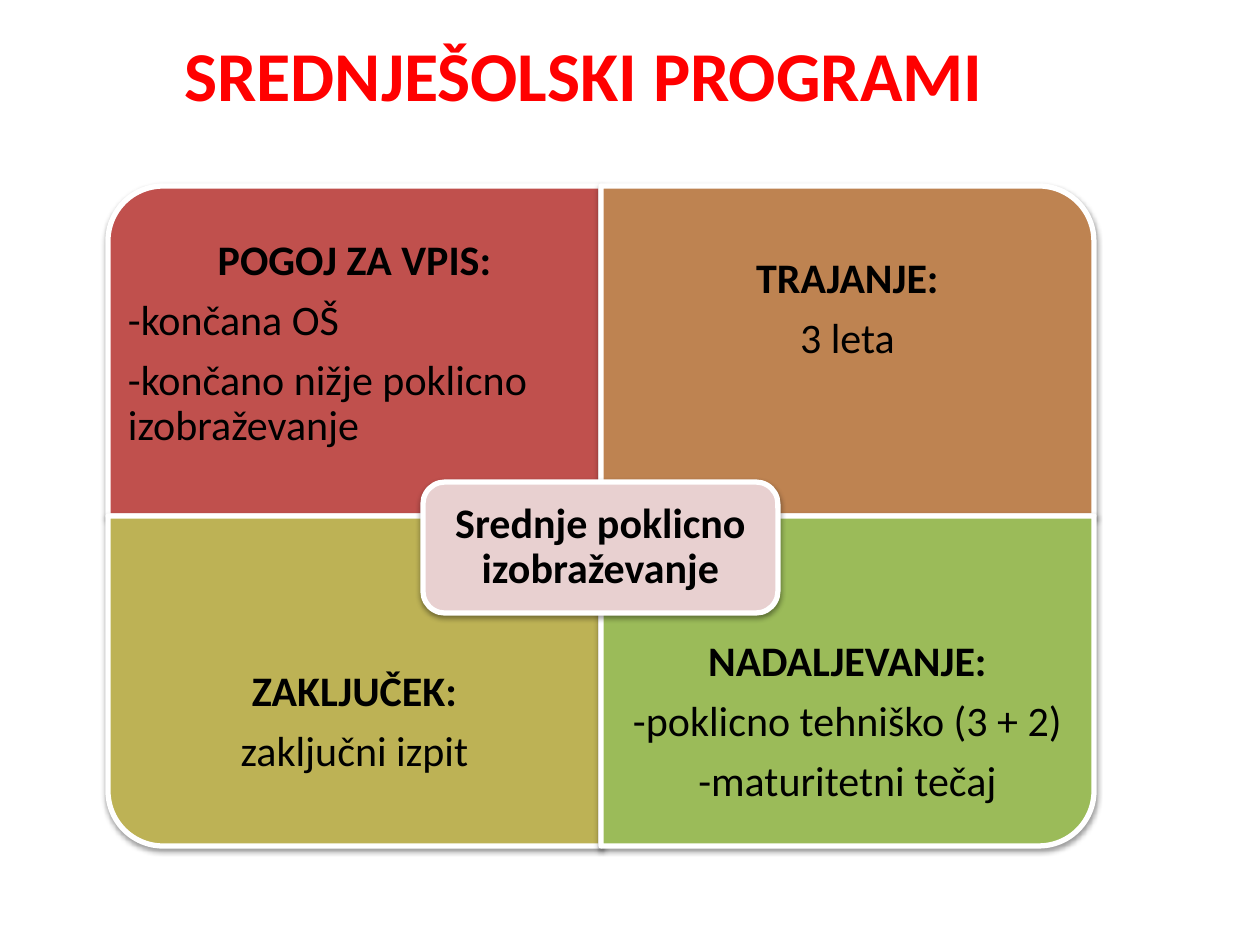
from lxml import etree
from pptx import Presentation
from pptx.dml.color import RGBColor
from pptx.enum.shapes import MSO_SHAPE as SHAPE
from pptx.enum.text import MSO_ANCHOR as ANCHOR, PP_ALIGN as ALIGN
from pptx.oxml import parse_xml
from pptx.util import Pt

PX = 914400 / 126
SHADOW = (
    '<a:effectLst xmlns:a="http://schemas.openxmlformats.org/drawingml/2006/main">'
    '<a:outerShdw blurRad="40000" dist="20000" dir="5400000" rotWithShape="0">'
    '<a:srgbClr val="000000"><a:alpha val="38000"/></a:srgbClr>'
    '</a:outerShdw></a:effectLst>'
)


def px(*lengths):
    return [round(n * PX) for n in lengths]


def color(value):
    return RGBColor.from_string(value)


prs = Presentation()
prs.slide_width, prs.slide_height = px(1260, 945)
s = prs.slides.add_slide(prs.slide_layouts[6])
shapes = s.shapes

left, top, width, height = 108, 186, 493, 330
text_height = 247
quadrants = [
    (0, 0, 270, "C0504D", 20, 35, ALIGN.LEFT,
     ["POGOJ ZA VPIS:", "-končana OŠ", "-končano nižje poklicno izobraževanje"]),
    (1, 0, 0, "BE8351", 24, 0, ALIGN.CENTER, ["TRAJANJE:", "3 leta"]),
    (0, 1, 180, "BDB255", 24, 0, ALIGN.CENTER, ["ZAKLJUČEK:", "zaključni izpit"]),
    (1, 1, 90, "9BBB59", 24, 0, ALIGN.CENTER,
     ["NADALJEVANJE:", "-poklicno tehniško (3 + 2)", "-maturitetni tečaj"]),
]

panels = []
texts = []
for col, row, angle, fill, inset, shift, align, lines in quadrants:
    x, y = left + col * width, top + row * height
    w, h = (height, width) if angle % 180 else (width, height)
    sp = shapes.add_shape(SHAPE.ROUND_1_RECTANGLE,
                          *px(x + (width - w) / 2, y + (height - h) / 2, w, h))
    sp.rotation = angle
    panels.append((sp, fill))
    text_top = y + row * (height - text_height) + shift
    box = shapes.add_textbox(*px(x, text_top, width, text_height))
    texts.append((box, inset, align, lines, 24, "000000"))

badge = shapes.add_shape(SHAPE.ROUNDED_RECTANGLE, *px(423, 482, 355, 131))
panels.append((badge, "E8D0D0"))
texts.append((badge, 12, ALIGN.CENTER, ["Srednje poklicno izobraževanje"], 24, "000000"))

title = shapes.add_textbox(*px(69, 0, 1029, 158))
texts.append((title, 12, ALIGN.CENTER, ["SREDNJEŠOLSKI PROGRAMI"], 40, "FF0000"))

for sp, fill in panels:
    sp.fill.solid()
    sp.fill.fore_color.rgb = color(fill)
    sp.line.color.rgb = color("FFFFFF")
    sp.line.width = Pt(3)
    sp._element.spPr.append(parse_xml(SHADOW))

for sp, inset, align, lines, size, ink in texts:
    tf = sp.text_frame
    tf.word_wrap = True
    tf.vertical_anchor = ANCHOR.MIDDLE
    tf.margin_left, tf.margin_top, tf.margin_right, tf.margin_bottom = px(*[inset] * 4)
    for i, line in enumerate(lines):
        p = tf.add_paragraph() if i else tf.paragraphs[0]
        p.alignment = align if i else ALIGN.CENTER
        p.line_spacing = 0.9
        p.space_after = Pt(8.4) if len(lines) > 1 else Pt(0)
        r = p.add_run()
        r.text = line
        r.font.name = "Calibri"
        r.font.size = Pt(size)
        r.font.bold = i == 0
        r.font.color.rgb = color(ink)

prs.save("out.pptx")
